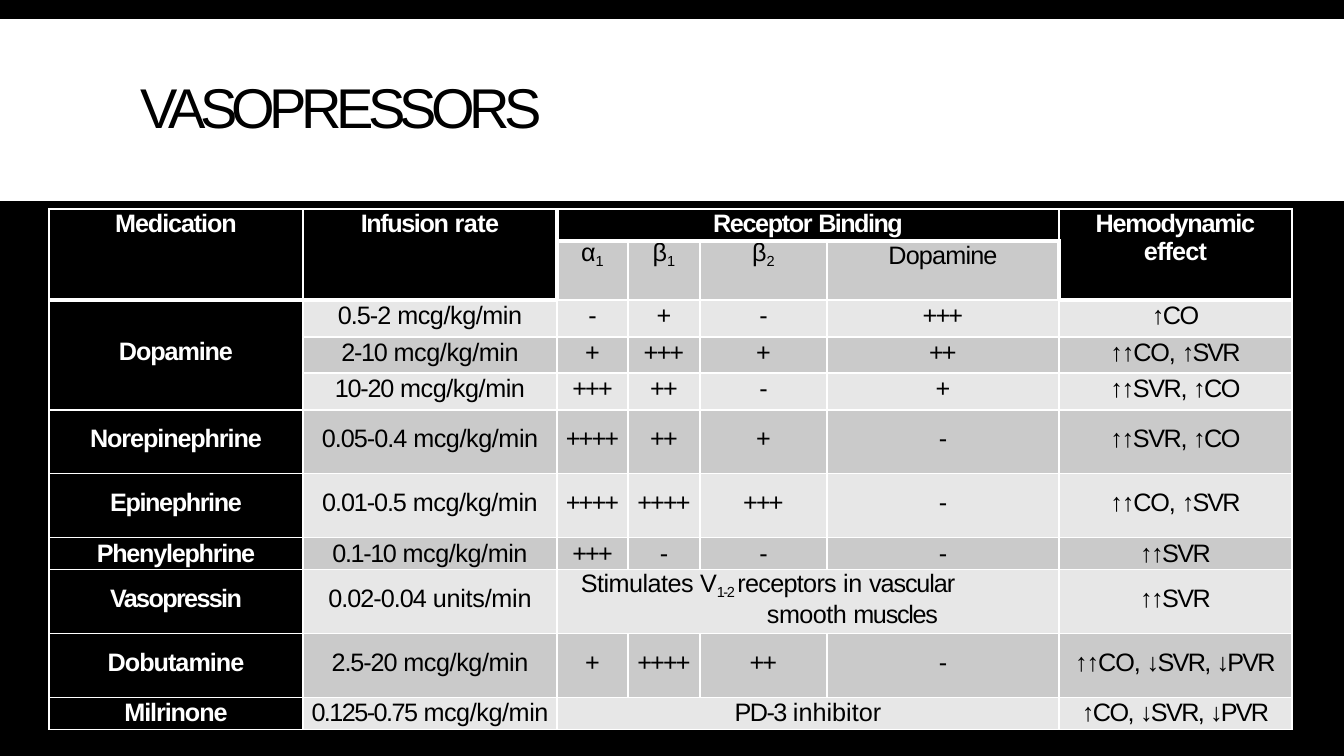
"""Build the vasopressor comparison slide."""
from dataclasses import dataclass, field

from lxml.etree import SubElement
from pptx import Presentation
from pptx.dml.color import RGBColor
from pptx.enum.shapes import MSO_SHAPE as Shape
from pptx.enum.text import MSO_ANCHOR as Anchor
from pptx.enum.text import MSO_AUTO_SIZE as AutoSize
from pptx.enum.text import PP_ALIGN as Align
from pptx.oxml.ns import qn
from pptx.util import Emu, Pt


@dataclass(frozen=True)
class Theme:
    black: RGBColor = RGBColor(0, 0, 0)
    white: RGBColor = RGBColor(255, 255, 255)
    dark_row: RGBColor = RGBColor(0xCA, 0xCA, 0xCA)
    light_row: RGBColor = RGBColor(0xE7, 0xE7, 0xE7)
    font: str = "Arial"
    title_size: int = 40
    table_size: int = 18
    thin: float = 1
    heavy: float = 3


@dataclass(frozen=True)
class Run:
    text: str
    tracking: float = 0
    subscript: bool = False


@dataclass(frozen=True)
class Entry:
    row: int
    col: int
    lines: list[list[Run]]
    fill: RGBColor
    rows: int = 1
    cols: int = 1
    top: int = 0
    leading: float | None = None
    hanging: bool = False


@dataclass(frozen=True)
class Regimen:
    drug: Run | None
    rate: list[Run]
    binding: list[Run] | list[str]
    effect: list[Run]
    height: int
    top: int = 0
    leading: float | None = None
    drug_rows: int = 1
    drug_top: int = field(default=0)


THEME = Theme()
BANDS = [(0, 0, 1344, 19), (0, 201, 1344, 555)]
COLUMN_WIDTHS = [254, 254, 71, 72, 127, 232, 233]
HEADER_HEIGHTS = [32, 59]
HEADER_LEADING, SHORT_LEADING = 20.4, 21.1
HEAVY_BELOW = {(2, 0), (2, 1), (2, 6)} | {(1, col) for col in range(2, 6)}
HEAVY_BESIDE = {(0, 2), (1, 2), (1, 6)}
DOSE_UNIT = Run("mcg/kg/min", -0.3)
MORE_CO, MORE_SVR = Run("↑CO", -1.1), Run("↑SVR", -1.4)
MOST_CO, MOST_SVR = Run("↑↑CO, ", -0.8), Run("↑↑SVR, ", -1)
SVR_ONLY = Run("↑↑SVR", -1.1)
LESS_SVR, LESS_PVR = Run("↓SVR, ", -1.2), Run("↓PVR", -1.3)

REGIMENS = [
    Regimen(Run("Dopamine", -0.8), [Run("0.5-2 ", -0.7), DOSE_UNIT], ["-", "+", "-", "+++"],
            [MORE_CO], 37, 2, drug_rows=3, drug_top=38),
    Regimen(None, [Run("2-10 ", -0.9), DOSE_UNIT], ["+", "+++", "+", "++"],
            [MOST_CO, MORE_SVR], 36, 2),
    Regimen(None, [Run("10-20 ", -0.9), DOSE_UNIT], ["+++", "++", "-", "+"],
            [MOST_SVR, MORE_CO], 37, 2),
    Regimen(Run("Norepinephrine", -0.8), [Run("0.05-0.4 ", -0.7), DOSE_UNIT],
            ["++++", "++", "+", "-"], [MOST_SVR, MORE_CO], 64, 15, drug_top=15),
    Regimen(Run("Epinephrine", -1), [Run("0.01-0.5 ", -0.8), DOSE_UNIT],
            ["++++", "++++", "+++", "-"], [MOST_CO, MORE_SVR], 64, 15, drug_top=15),
    Regimen(Run("Phenylephrine", -0.9), [Run("0.1-10 ", -1), DOSE_UNIT],
            ["+++", "-", "-", "-"], [SVR_ONLY], 32, leading=SHORT_LEADING),
    Regimen(Run("Vasopressin", -1.2), [Run("0.02-0.04 ", -0.7), Run("units/min", -0.2)],
            [Run("Stimulates ", -0.4), Run("V", -0.8), Run("1-2 ", -1.1, True),
             Run("receptors ", -0.5), Run("in ", -0.2), Run("vascular ", -0.8),
             Run("smooth ", -0.4), Run("muscles", -0.9)],
            [SVR_ONLY], 64, 15, drug_top=15),
    Regimen(Run("Dobutamine", -0.7), [Run("2.5-20 ", -0.8), DOSE_UNIT],
            ["+", "++++", "++", "-"], [MOST_CO, LESS_SVR, LESS_PVR], 64, 15, drug_top=15),
    Regimen(Run("Milrinone", -0.8), [Run("0.125-0.75 ", -1.1), DOSE_UNIT],
            [Run("PD-3 ", -1.1), Run("inhibitor")],
            [Run("↑CO, ", -1.1), LESS_SVR, LESS_PVR], 32, leading=SHORT_LEADING),
]


def px(length: int) -> Emu:
    return Emu(round(length * 914400 / 100.8))


def write_line(paragraph, runs: list[Run], size: int, color: RGBColor, bold: bool) -> None:
    paragraph.font.name = THEME.font
    paragraph.font.size = Pt(size)
    paragraph.font.bold = bold
    paragraph.font.color.rgb = color
    for part in runs:
        run = paragraph.add_run()
        run.text = part.text
        properties = run._r.get_or_add_rPr()
        properties.set("spc", str(round(part.tracking * 100)))
        if part.subscript:
            properties.set("baseline", "-21000")


def header_entries() -> list[Entry]:
    heads = [
        (0, 0, [[Run("Medication", -0.8)]], 2, 1),
        (0, 1, [[Run("Infusion ", -1), Run("rate", -0.4)]], 2, 1),
        (0, 2, [[Run("Receptor ", -1), Run("Binding", -1.1)]], 1, 4),
        (0, 6, [[Run("Hemodynamic", -0.9)], [Run("effect", -0.6)]], 2, 1),
    ]
    receptors = [
        [Run("α", -0.8), Run("1", -1.3, True)],
        [Run("β", -0.9), Run("1", -1.4, True)],
        [Run("β", -0.5), Run("2", -0.8, True)],
        [Run("Dopamine", -0.6)],
    ]
    return [Entry(row, col, lines, THEME.black, rows, cols, leading=HEADER_LEADING)
            for row, col, lines, rows, cols in heads] + [
        Entry(1, col, [runs], THEME.dark_row, leading=HEADER_LEADING)
        for col, runs in enumerate(receptors, 2)]


def regimen_entries(row: int, regimen: Regimen) -> list[Entry]:
    fill = THEME.dark_row if row % 2 else THEME.light_row
    top, leading = regimen.top, regimen.leading
    entries = [Entry(row, col, [runs], fill, top=top, leading=leading)
               for col, runs in ((1, regimen.rate), (6, regimen.effect))]
    if regimen.drug:
        entries.append(Entry(row, 0, [[regimen.drug]], THEME.black, regimen.drug_rows,
                             top=regimen.drug_top, leading=leading))
    if isinstance(regimen.binding[0], Run):
        entries.append(Entry(row, 2, [regimen.binding], fill, cols=4, leading=leading,
                             hanging=leading is None))
    else:
        entries += [Entry(row, col, [[Run(marks, -1.3 if len(marks) > 1 else 0)]], fill,
                          top=top, leading=leading)
                    for col, marks in enumerate(regimen.binding, 2)]
    return entries


def draw_borders(cell, entry: Entry) -> None:
    bottom, right = entry.row + entry.rows, entry.col + entry.cols
    edges = {
        "a:lnL": (entry.row, entry.col) in HEAVY_BESIDE,
        "a:lnR": (entry.row, right) in HEAVY_BESIDE,
        "a:lnT": (entry.row, entry.col) in HEAVY_BELOW,
        "a:lnB": (bottom, entry.col) in HEAVY_BELOW,
    }
    properties = cell._tc.get_or_add_tcPr()
    for position, (tag, heavy) in enumerate(edges.items()):
        width = Pt(THEME.heavy if heavy else THEME.thin)
        line = SubElement(properties, qn(tag), w=str(width))
        SubElement(SubElement(line, qn("a:solidFill")), qn("a:srgbClr"), val=str(THEME.white))
        properties.insert(position, line)


def draw_entry(table, entry: Entry) -> None:
    cell = table.cell(entry.row, entry.col)
    last_row, last_col = entry.row + entry.rows - 1, entry.col + entry.cols - 1
    if (last_row, last_col) != (entry.row, entry.col):
        cell.merge(table.cell(last_row, last_col))
    for row in range(entry.row, last_row + 1):
        for col in range(entry.col, last_col + 1):
            covered = table.cell(row, col)
            covered.fill.solid()
            covered.fill.fore_color.rgb = entry.fill
            covered.margin_left = covered.margin_right = covered.margin_bottom = 0
            covered.margin_top = px(entry.top)
    cell.vertical_anchor = Anchor.TOP
    draw_borders(cell, entry)
    on_black = entry.fill == THEME.black
    for index, runs in enumerate(entry.lines):
        paragraph = cell.text_frame.add_paragraph() if index else cell.text_frame.paragraphs[0]
        paragraph.alignment = Align.LEFT if entry.hanging else Align.CENTER
        if entry.leading:
            paragraph.line_spacing = Pt(entry.leading)
        if entry.hanging:
            cell.margin_right = px(90)
            paragraph._p.get_or_add_pPr().set("marL", str(px(210)))
            paragraph._p.get_or_add_pPr().set("indent", str(px(-186)))
        write_line(paragraph, runs, THEME.table_size,
                   THEME.white if on_black else THEME.black, on_black)


def draw_title(title) -> None:
    title.left, title.top, title.width, title.height = map(px, (141, 72, 420, 70))
    frame = title.text_frame
    frame.margin_left = frame.margin_right = frame.margin_bottom = 0
    frame.margin_top = px(1)
    frame.word_wrap, frame.auto_size = True, AutoSize.NONE
    frame.vertical_anchor = Anchor.TOP
    frame.paragraphs[0].alignment = Align.LEFT
    write_line(frame.paragraphs[0], [Run("VASOPRESSORS", -4)], THEME.title_size,
               THEME.black, False)


def draw_table(slide) -> None:
    heights = HEADER_HEIGHTS + [regimen.height for regimen in REGIMENS]
    table = slide.shapes.add_table(len(heights), len(COLUMN_WIDTHS), px(49), px(209),
                                   px(sum(COLUMN_WIDTHS)), px(sum(heights))).table
    table.first_row = table.horz_banding = False
    for column, width in zip(table.columns, COLUMN_WIDTHS):
        column.width = px(width)
    for row, height in zip(table.rows, heights):
        row.height = px(height)
    entries = header_entries()
    for row, regimen in enumerate(REGIMENS, len(HEADER_HEIGHTS)):
        entries += regimen_entries(row, regimen)
    for entry in entries:
        draw_entry(table, entry)


def main() -> None:
    deck = Presentation()
    deck.slide_width, deck.slide_height = px(1344), px(756)
    slide = deck.slides.add_slide(deck.slide_layouts[5])
    for bounds in BANDS:
        band = slide.shapes.add_shape(Shape.RECTANGLE, *map(px, bounds))
        band.shadow.inherit = False
        band.fill.solid()
        band.fill.fore_color.rgb = THEME.black
        band.line.fill.background()
    draw_title(slide.shapes.title)
    draw_table(slide)
    deck.save("out.pptx")


if __name__ == "__main__":
    main()
